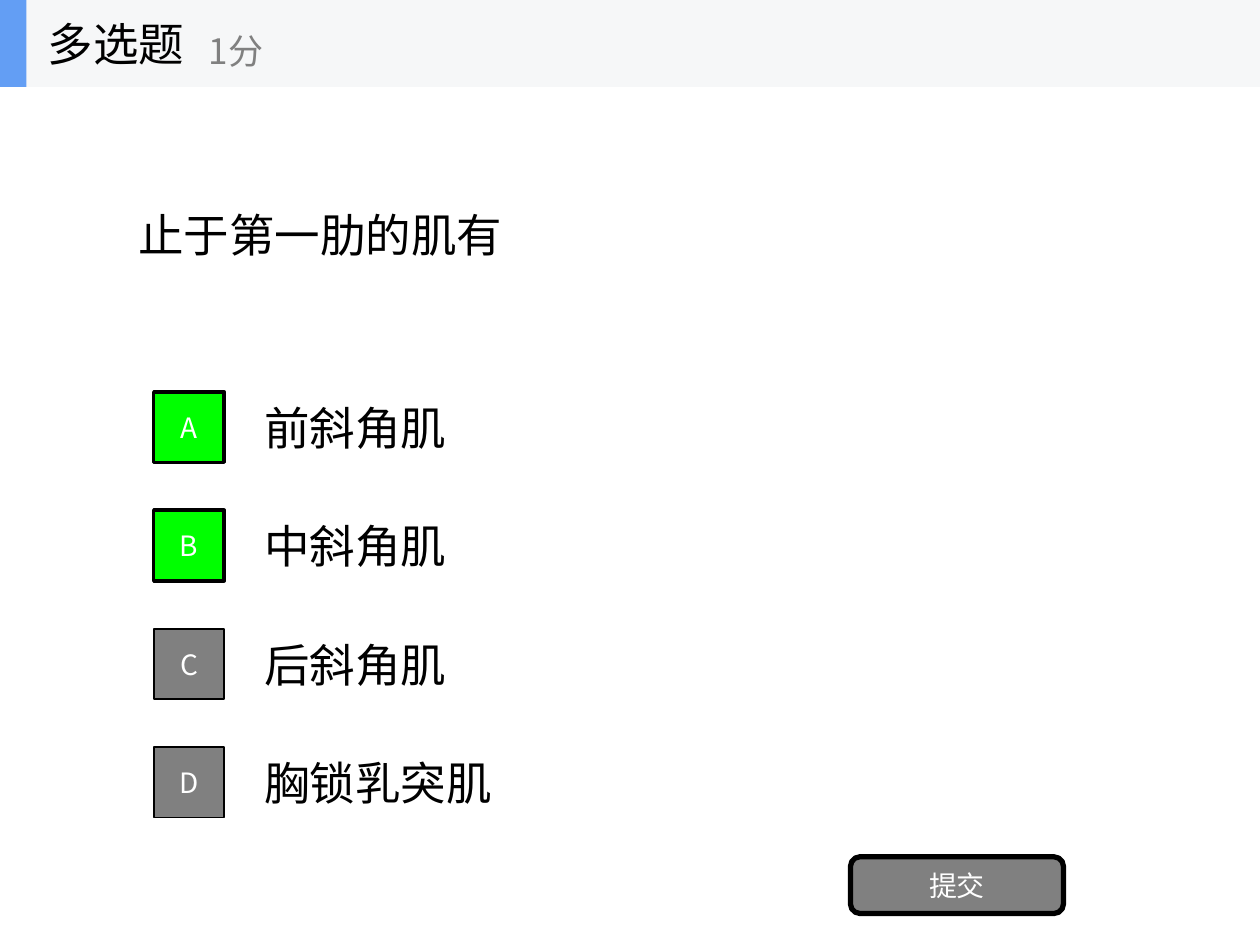
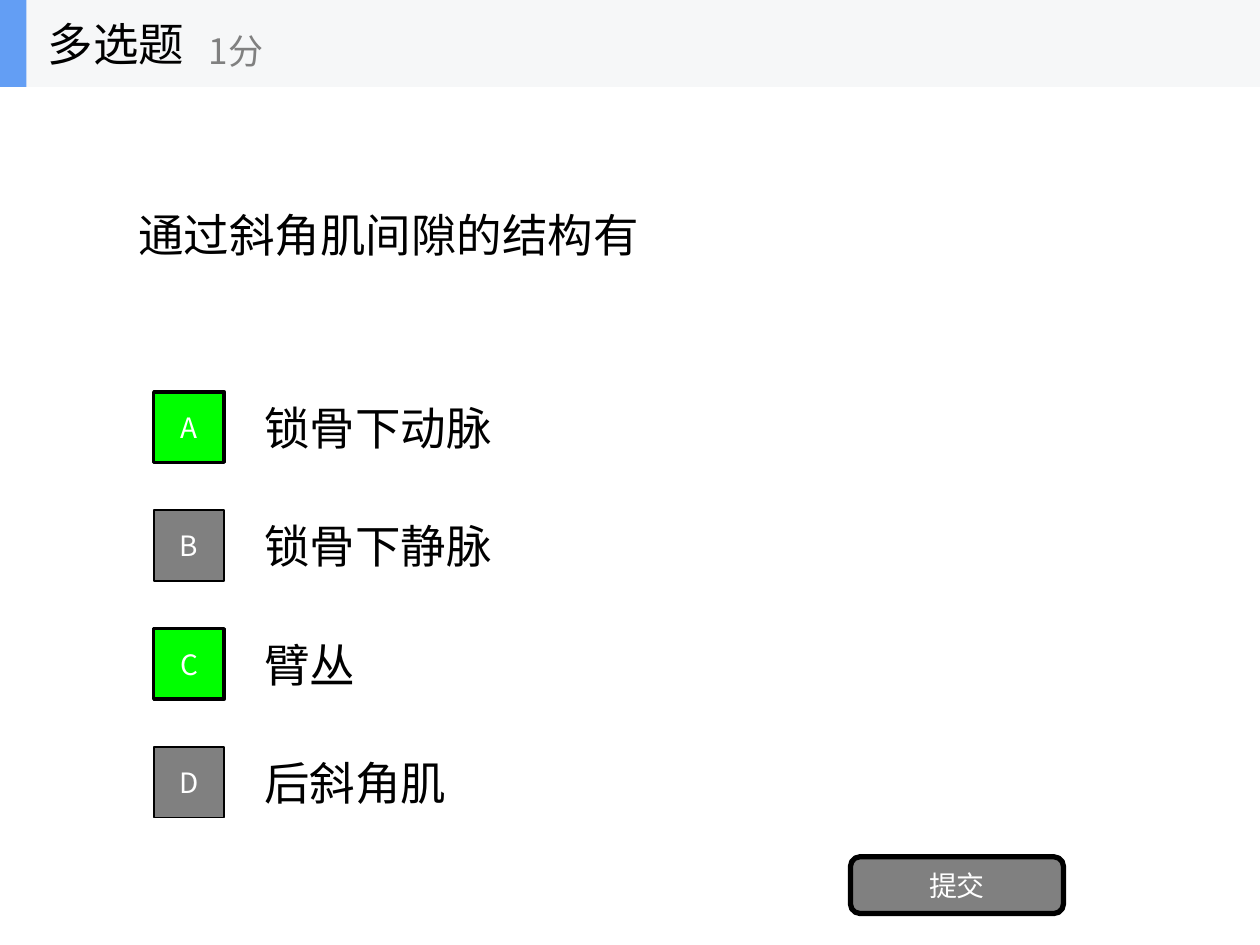
from dataclasses import dataclass
from lxml.etree import SubElement
from pptx import Presentation
from pptx.dml.color import RGBColor
from pptx.enum.shapes import MSO_SHAPE
from pptx.enum.text import MSO_ANCHOR, PP_ALIGN
from pptx.oxml.ns import qn
from pptx.util import Inches, Pt


@dataclass(frozen=True)
class Theme:
    font: str = "Noto Sans CJK SC"
    ink: str = "000000"
    gray: str = "808080"
    white: str = "FFFFFF"
    green: str = "00FF00"
    blue: str = "639EF4"
    band: str = "F6F7F8"
    large: int = 26
    mid: int = 20
    small: int = 16


COLS, ROWS = 10, 7.5
HEAD = 0.69
FIRST, STEP = 3.04, 0.94
ROW, BADGE = 0.7, 0.56

QUIZ = [
    ("止于第一肋的肌有", "AB",
     ["前斜角肌", "中斜角肌", "后斜角肌", "胸锁乳突肌"]),
    ("通过斜角肌间隙的结构有", "AC",
     ["锁骨下动脉", "锁骨下静脉", "臂丛", "后斜角肌"]),
]


class Deck:
    def __init__(self, theme):
        self.theme = theme
        self.prs = Presentation()
        self.prs.slide_width = Inches(10)
        self.prs.slide_height = Inches(7.5)
        self.slide = None

    def start(self):
        self.slide = self.prs.slides.add_slide(self.prs.slide_layouts[6])

    def place(self, col, row, wide, high):
        x = self.prs.slide_width / COLS
        y = self.prs.slide_height / ROWS
        return [round(n) for n in (col * x, row * y, wide * x, high * y)]

    def letter(self, shape, text, size, color, align=PP_ALIGN.LEFT):
        frame = shape.text_frame
        frame.word_wrap = True
        frame.vertical_anchor = MSO_ANCHOR.MIDDLE
        para = frame.paragraphs[0]
        para.alignment = align
        run = para.add_run()
        run.text = text
        run.font.size = Pt(size)
        run.font.color.rgb = RGBColor.from_string(color)
        run.font.name = self.theme.font
        props = run._r.get_or_add_rPr()
        SubElement(props, qn("a:ea")).set("typeface", self.theme.font)

    def label(self, area, text, size=None, color=None, home=None):
        home = home or self.slide.shapes
        box = home.add_textbox(*self.place(*area))
        self.letter(box, text, size or self.theme.large,
                    color or self.theme.ink)

    def block(self, area, fill, kind=MSO_SHAPE.RECTANGLE, edge=0, home=None):
        home = home or self.slide.shapes
        shape = home.add_shape(kind, *self.place(*area))
        shape.shadow.inherit = False
        shape.fill.solid()
        shape.fill.fore_color.rgb = RGBColor.from_string(fill)
        if edge:
            shape.line.color.rgb = RGBColor.from_string(self.theme.ink)
            shape.line.width = Pt(edge)
        else:
            shape.line.fill.background()
        return shape

    def button(self, area, text, fill, edge, kind=MSO_SHAPE.RECTANGLE):
        shape = self.block(area, fill, kind, edge)
        self.letter(shape, text, self.theme.small, self.theme.white,
                    PP_ALIGN.CENTER)

    def header(self, title, score):
        look = self.theme
        home = self.slide.shapes.add_group_shape().shapes
        self.block((0, 0, COLS, HEAD), look.band, home=home)
        self.block((0, 0, 0.21, HEAD), look.blue, home=home)
        self.label((0.28, 0, 2.08, HEAD), title, home=home)
        self.label((1.56, 0.12, 2.5, 0.56), score, look.mid, look.gray, home)

    def choices(self, texts, right):
        look = self.theme
        rows = [FIRST + i * STEP for i in range(len(texts))]
        for row, text in zip(rows, texts):
            self.label((2, row, 7, ROW), text)
        for row, mark in zip(rows, "ABCD"):
            fill, edge = (look.green, 2) if mark in right else (look.gray, 1)
            top = row + (ROW - BADGE) / 2
            self.button((1.22, top, BADGE, BADGE), mark, fill, edge)

    def ask(self, text, right, texts):
        self.start()
        self.label((1, HEAD, 8, 2.34), text)
        self.choices(texts, right)
        self.button((6.75, 6.8, 1.69, 0.45), "提交", self.theme.gray, 3,
                    MSO_SHAPE.ROUNDED_RECTANGLE)
        self.header("多选题", "1分")


def main():
    deck = Deck(Theme())
    for item in QUIZ:
        deck.ask(*item)
    deck.prs.save("out.pptx")


if __name__ == "__main__":
    main()
